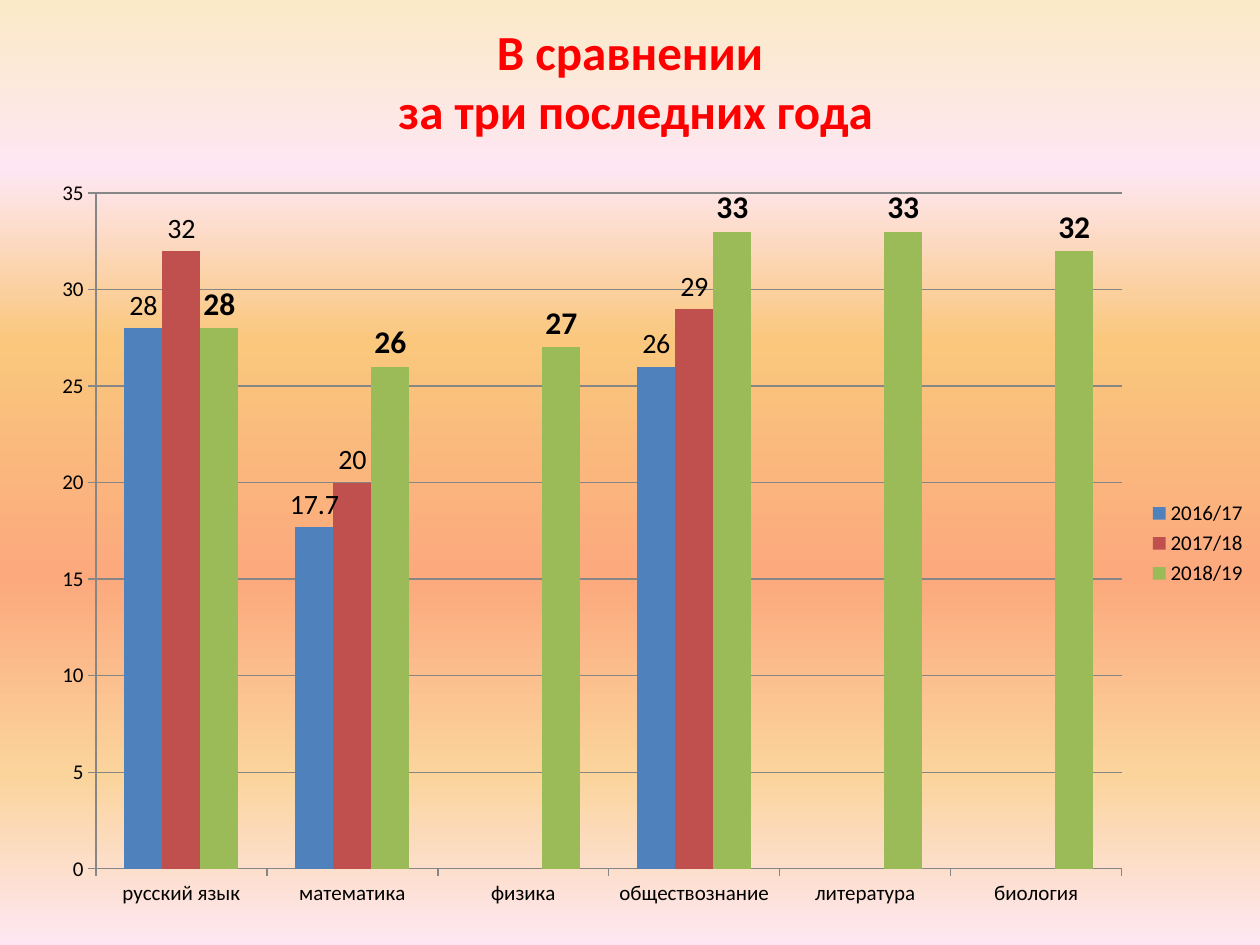
"""Build a slide comparing exam scores by subject over three school years."""
import pptx
import pptx.chart.data
import pptx.dml.color
import pptx.enum.chart
import pptx.enum.text
import pptx.oxml
import pptx.oxml.ns
import pptx.util
from lxml import etree

RGBColor = pptx.dml.color.RGBColor
RED = RGBColor(0xFF, 0x00, 0x00)
BLACK = RGBColor(0x00, 0x00, 0x00)
GREY = RGBColor(0x86, 0x86, 0x86)
CREAM = RGBColor(0xFB, 0xEA, 0xC7)
PINK = RGBColor(0xFE, 0xE7, 0xF2)
AMBER = RGBColor(0xFA, 0xC7, 0x7D)
CORAL = RGBColor(0xFB, 0xA9, 0x7D)
SAND = RGBColor(0xFB, 0xD4, 0x9C)
BLUE = RGBColor(0x4F, 0x81, 0xBD)
BRICK = RGBColor(0xC0, 0x50, 0x4D)
GREEN = RGBColor(0x9B, 0xBB, 0x59)

FONT = "Calibri"
WIDTH, HEIGHT = pptx.util.Inches(10), pptx.util.Inches(7.5)
SUNSET = [(0, CREAM), (18, PINK), (36, AMBER), (61, CORAL), (82, SAND), (100, PINK)]
SUBJECTS = ["русский язык", "математика", "физика", "обществознание",
            "литература", "биология"]
YEARS = [
    ("2016/17", [28, 17.7, None, 26, None, None], BLUE, 16, False),
    ("2017/18", [32, 20, None, 29, None, None], BRICK, 16, False),
    ("2018/19", [28, 26, 27, 33, 33, 32], GREEN, 18, True),
]


def share_box(left, top, width, height):
    """Turn shares of the slide's size into a position and size."""
    return (int(left * WIDTH), int(top * HEIGHT),
            int(width * WIDTH), int(height * HEIGHT))


def style_font(font, size, color, bold=False):
    """Apply the slide's typeface with a size, colour and weight."""
    font.name = FONT
    font.size = pptx.util.Pt(size)
    font.color.rgb = color
    font.bold = bold


def paint_background(slide, stops):
    """Fill the background with a gradient running from top to bottom."""
    fill = slide.background.fill
    fill.gradient()
    qn = pptx.oxml.ns.qn
    gradient = slide.background._cSld.find(".//" + qn("a:gradFill"))
    stop_list = gradient.find(qn("a:gsLst"))
    for default_stop in list(stop_list):
        stop_list.remove(default_stop)
    for percent, color in stops:
        stop = etree.SubElement(stop_list, qn("a:gs"), pos=str(percent * 1000))
        etree.SubElement(stop, qn("a:srgbClr"), val=str(color))
    direction = gradient.find(qn("a:lin"))
    direction.set("ang", "5400000")
    direction.set("scaled", "0")


def add_title(slide, wording, box):
    """Place the heading in the title placeholder."""
    title = slide.shapes.title
    title.left, title.top, title.width, title.height = box
    frame = title.text_frame
    frame.text = wording
    frame.vertical_anchor = pptx.enum.text.MSO_ANCHOR.MIDDLE
    heading = frame.paragraphs[0]
    heading.alignment = pptx.enum.text.PP_ALIGN.CENTER
    for run in heading.runs:
        style_font(run.font, 28, RED, True)


def style_axis(axis, gridlines):
    """Give an axis outside ticks and grey lines."""
    axis.major_tick_mark = pptx.enum.chart.XL_TICK_MARK.OUTSIDE
    axis.minor_tick_mark = pptx.enum.chart.XL_TICK_MARK.NONE
    axis.format.line.color.rgb = GREY
    axis.has_major_gridlines = gridlines
    if gridlines:
        axis.major_gridlines.format.line.color.rgb = GREY


def style_series(series, color, label_size, bold):
    """Colour one year's columns and show their values above them."""
    series.format.fill.solid()
    series.format.fill.fore_color.rgb = color
    series.invert_if_negative = False
    labels = series.data_labels
    labels.show_value = True
    labels.position = pptx.enum.chart.XL_LABEL_POSITION.OUTSIDE_END
    style_font(labels.font, label_size, BLACK, bold)


def add_score_chart(slide, box):
    """Add the clustered columns of scores by subject and year."""
    scores = pptx.chart.data.CategoryChartData()
    scores.categories = SUBJECTS
    for year, values, *_ in YEARS:
        scores.add_series(year, values)
    kind = pptx.enum.chart.XL_CHART_TYPE.COLUMN_CLUSTERED
    chart = slide.shapes.add_chart(kind, *box, scores).chart
    chart.has_title = False
    style_font(chart.font, 12, BLACK)
    chart.has_legend = True
    chart.legend.position = pptx.enum.chart.XL_LEGEND_POSITION.RIGHT
    chart.legend.include_in_layout = False
    style_axis(chart.category_axis, False)
    style_axis(chart.value_axis, True)
    columns = chart.plots[0]
    columns.gap_width = 150
    columns.vary_by_categories = False
    for series, (_, _, color, label_size, bold) in zip(columns.series, YEARS):
        style_series(series, color, label_size, bold)


def main():
    """Build and save the slide."""
    deck = pptx.Presentation()
    deck.slide_width, deck.slide_height = WIDTH, HEIGHT
    slide = deck.slides.add_slide(deck.slide_layouts.get_by_name("Title Only"))
    paint_background(slide, SUNSET)
    add_title(slide, "В сравнении\v за три последних года",
              share_box(0.05, 0, 0.9, 0.17))
    add_score_chart(slide, share_box(0.03, 0.175, 0.97, 0.8))
    deck.save("out.pptx")


if __name__ == "__main__":
    main()
